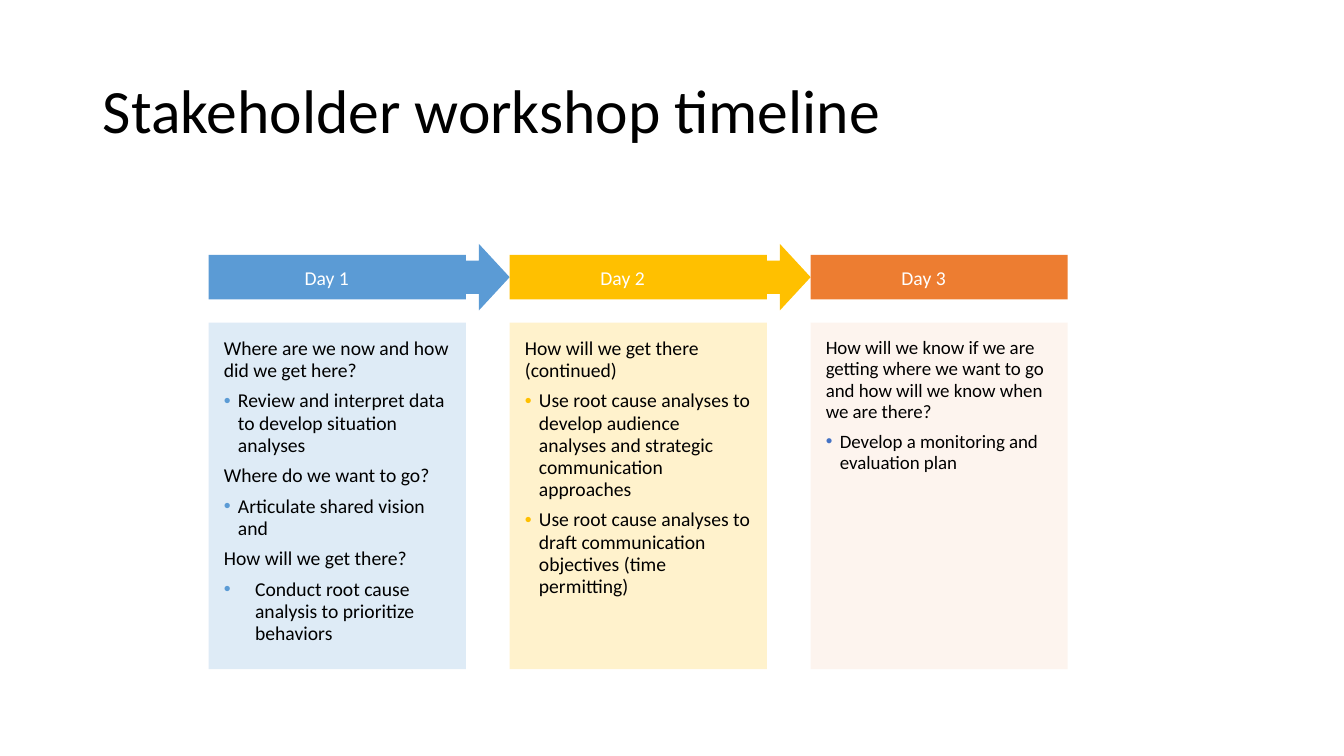
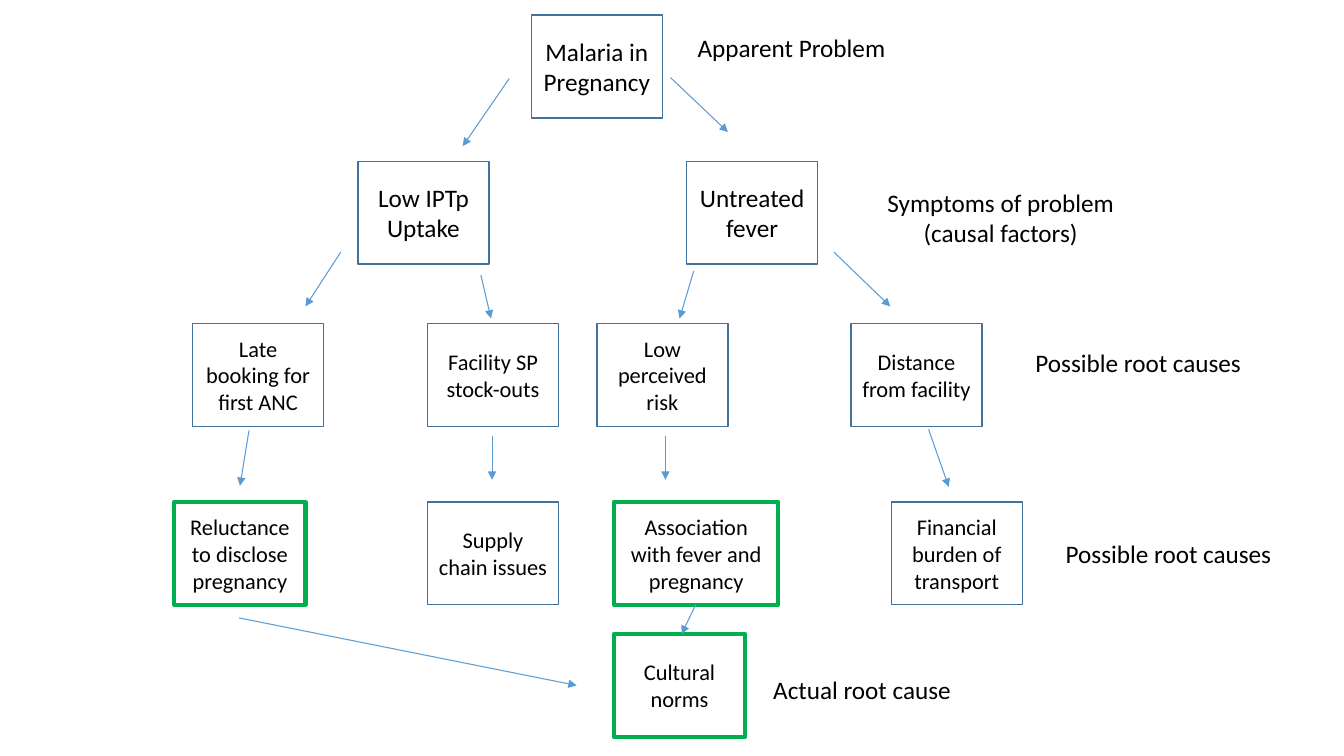
from dataclasses import dataclass

from lxml import etree
from pptx import Presentation
from pptx.dml.color import RGBColor
from pptx.enum import shapes, text
from pptx.oxml import ns
from pptx.util import Inches, Pt


@dataclass(frozen=True)
class Theme:
    font: str = "Calibri"
    black: str = "000000"
    white: str = "FFFFFF"
    blue: str = "5B9BD5"
    gold: str = "FFC000"
    orange: str = "ED7D31"
    peach: str = "F7CAAC"
    navy: str = "4472C4"
    edge: str = "42719B"
    green: str = "00B050"
    title: float = 44
    large: float = 18
    node: float = 16
    body: float = 14
    small: float = 13.5


T = Theme()
RECT = shapes.MSO_SHAPE.RECTANGLE
ARROW = shapes.MSO_SHAPE.RIGHT_ARROW
LEFT, CENTER = text.PP_ALIGN.LEFT, text.PP_ALIGN.CENTER
TOP, MIDDLE = text.MSO_ANCHOR.TOP, text.MSO_ANCHOR.MIDDLE


def child(parent, tag, **attrs):
    return etree.SubElement(parent, ns.qn(tag), **attrs)


def write(frame, lines, size=T.body, color=T.black, align=LEFT, anchor=TOP,
          pad=(0.1, 0.05), indent=0, spacing=None, before=0, bullet=T.blue):
    frame.word_wrap = True
    frame.auto_size = text.MSO_AUTO_SIZE.NONE
    frame.vertical_anchor = anchor
    frame.margin_left = frame.margin_right = Inches(pad[0])
    frame.margin_top = frame.margin_bottom = Inches(pad[1])
    for i, line in enumerate(lines):
        words, hang = line if isinstance(line, tuple) else (line, 0)
        para = frame.paragraphs[0] if i == 0 else frame.add_paragraph()
        para.alignment = align
        para.line_spacing = spacing
        para.space_before = Pt(before if i else 0)
        run = para.add_run()
        run.text = words
        run.font.name = T.font
        run.font.size = Pt(size)
        run.font.color.rgb = RGBColor.from_string(color)
        props = para._p.get_or_add_pPr()
        props.set("marL", str(Inches(hang or indent)))
        props.set("indent", str(-Inches(hang)))
        if hang:
            child(child(props, "a:buClr"), "a:srgbClr", val=bullet)
            child(props, "a:buFont", typeface="Arial")
            child(props, "a:buChar", char="•")


def block(slide, box, kind=RECT, fill=None, alpha=None, line=None, weight=1):
    shape = slide.shapes.add_shape(kind, *map(Inches, box))
    shape.shadow.inherit = False
    if fill:
        shape.fill.solid()
        shape.fill.fore_color.rgb = RGBColor.from_string(fill)
        if alpha:
            color = shape._element.spPr.find(".//" + ns.qn("a:srgbClr"))
            child(color, "a:alpha", val=str(alpha * 1000))
    else:
        shape.fill.background()
    if line:
        shape.line.color.rgb = RGBColor.from_string(line)
        shape.line.width = Pt(weight)
    else:
        shape.line.fill.background()
    return shape


def arrow(slide, start, end):
    link = slide.shapes.add_connector(
        shapes.MSO_CONNECTOR.STRAIGHT, *map(Inches, start + end))
    link.line.color.rgb = RGBColor.from_string(T.blue)
    link.line.width = Pt(0.75)
    child(link.line._get_or_add_ln(), "a:tailEnd", type="triangle")
    child(link._element.spPr, "a:effectLst")


def heading(slide, box, words):
    title = slide.shapes.title
    title.left, title.top, title.width, title.height = map(Inches, box)
    write(title.text_frame, [words], size=T.title, anchor=MIDDLE, spacing=0.9)


DAYS = [
    ("Day 1", 0.75, T.blue, T.blue, T.blue, T.body, [
        "Where are we now and how did we get here?",
        ("Review and interpret data to develop situation analyses", 0.14),
        "Where do we want to go?",
        ("Articulate shared vision and", 0.14),
        "How will we get there?",
        ("Conduct root cause analysis to prioritize behaviors", 0.31)]),
    ("Day 2", 0.7, T.gold, T.gold, T.gold, T.body, [
        "How will we get there (continued)",
        ("Use root cause analyses to develop audience analyses and "
         "strategic communication approaches", 0.14),
        ("Use root cause analyses to draft communication objectives "
         "(time permitting)", 0.14)]),
    ("Day 3", 0.7, T.orange, T.peach, T.navy, T.small, [
        "How will we know if we are getting where we want to go and how "
        "will we know when we are there?",
        ("Develop a monitoring and evaluation plan", 0.14)]),
]


def timeline(slide, box, days):
    left, top, width, height = box
    wide, tall, drop = 2.55, 0.44, 0.78
    tip, rise = 0.61, 0.66
    pitch = (width - wide) / (len(days) - 1)
    for i, day in enumerate(days[:-1], 1):
        block(slide, (left + i * pitch - tip, top + (tall - rise) / 2, tip, rise),
              ARROW, fill=day[2])
    for i, (name, indent, color, tint, dot, size, lines) in enumerate(days):
        x = left + i * pitch
        y = top + height - 3.44
        panel = block(slide, (x, y, wide, 3.44), fill=tint, alpha=20)
        write(panel.text_frame, lines, size=size, pad=(0.15, 0.15),
              spacing=0.94, before=6, bullet=dot)
        band = block(slide, (x, top, wide, tall), fill=color)
        write(band.text_frame, [name], color=T.white, anchor=MIDDLE,
              pad=(0.2, 0.1), indent=indent)


ROWS = [0, 1.45, 3.06, 4.83, 6.14]
WIDE, TALL = 1.3, 1.02
NODES = [
    (0, 3.54, "Malaria in Pregnancy"),
    (1, 1.82, "Low IPTp Uptake"),
    (1, 5.08, "Untreated fever"),
    (2, 0.18, "Late booking for first ANC"),
    (2, 2.51, "Facility SP stock-outs"),
    (2, 4.19, "Low perceived risk"),
    (2, 6.71, "Distance from facility"),
    (3, 2.51, "Supply chain issues"),
    (3, 7.11, "Financial burden of transport"),
]
ROOTS = [
    (3, 0, WIDE, "Reluctance to disclose pregnancy"),
    (3, 4.36, 1.63, "Association with fever and pregnancy"),
    (4, 4.36, WIDE, "Cultural norms"),
]
LINKS = [
    ((3.32, 0.63), (2.86, 1.3)), ((4.92, 0.62), (5.49, 1.16)),
    ((1.65, 2.35), (1.3, 2.89)), ((3.04, 2.58), (3.14, 3.01)),
    ((5.15, 2.54), (5.01, 3.01)), ((6.54, 2.35), (7.1, 2.89)),
    ((0.74, 4.12), (0.65, 4.67)), ((3.15, 4.18), (3.15, 4.61)),
    ((4.87, 4.18), (4.87, 4.61)), ((7.48, 4.11), (7.68, 4.68)),
    ((5.17, 5.85), (5.03, 6.14)), ((0.64, 5.98), (3.99, 6.65)),
]
LABELS = [
    (5.08, 0.12, 2.08, ["Apparent Problem"]),
    (6.96, 1.66, 2.47, ["Symptoms of problem", "(causal factors)"]),
    (8.43, 3.25, 2.26, ["Possible root causes"]),
    (8.73, 5.14, 2.26, ["Possible root causes"]),
    (5.83, 6.49, 1.98, ["Actual root cause"]),
]


def tree(slide, left, top):
    plain = [(row, x, WIDE, words, T.edge, 1) for row, x, words in NODES]
    marked = [(*root, T.green, 3) for root in ROOTS]
    for row, x, wide, words, color, weight in plain + marked:
        node = block(slide, (left + x, top + ROWS[row], wide, TALL),
                     line=color, weight=weight)
        write(node.text_frame, [words], size=T.large if row < 2 else T.node,
              align=CENTER, anchor=MIDDLE)
    for start, end in LINKS:
        arrow(slide, (left + start[0], top + start[1]),
              (left + end[0], top + end[1]))
    for x, y, wide, lines in LABELS:
        label = slide.shapes.add_textbox(
            *map(Inches, (left + x, top + y, wide, 0.1 + 0.3 * len(lines))))
        write(label.text_frame, lines, size=T.large, align=CENTER)


def main():
    deck = Presentation()
    deck.slide_width, deck.slide_height = Inches(13.33), Inches(7.5)
    plan = deck.slides.add_slide(deck.slide_layouts[5])
    heading(plan, (0.92, 0.4, 11.5, 1.45), "Stakeholder workshop timeline")
    timeline(plan, (2.07, 2.53, 8.52, 4.11), DAYS)
    tree(deck.slides.add_slide(deck.slide_layouts[6]), 1.73, 0.15)
    deck.save("out.pptx")


if __name__ == "__main__":
    main()
